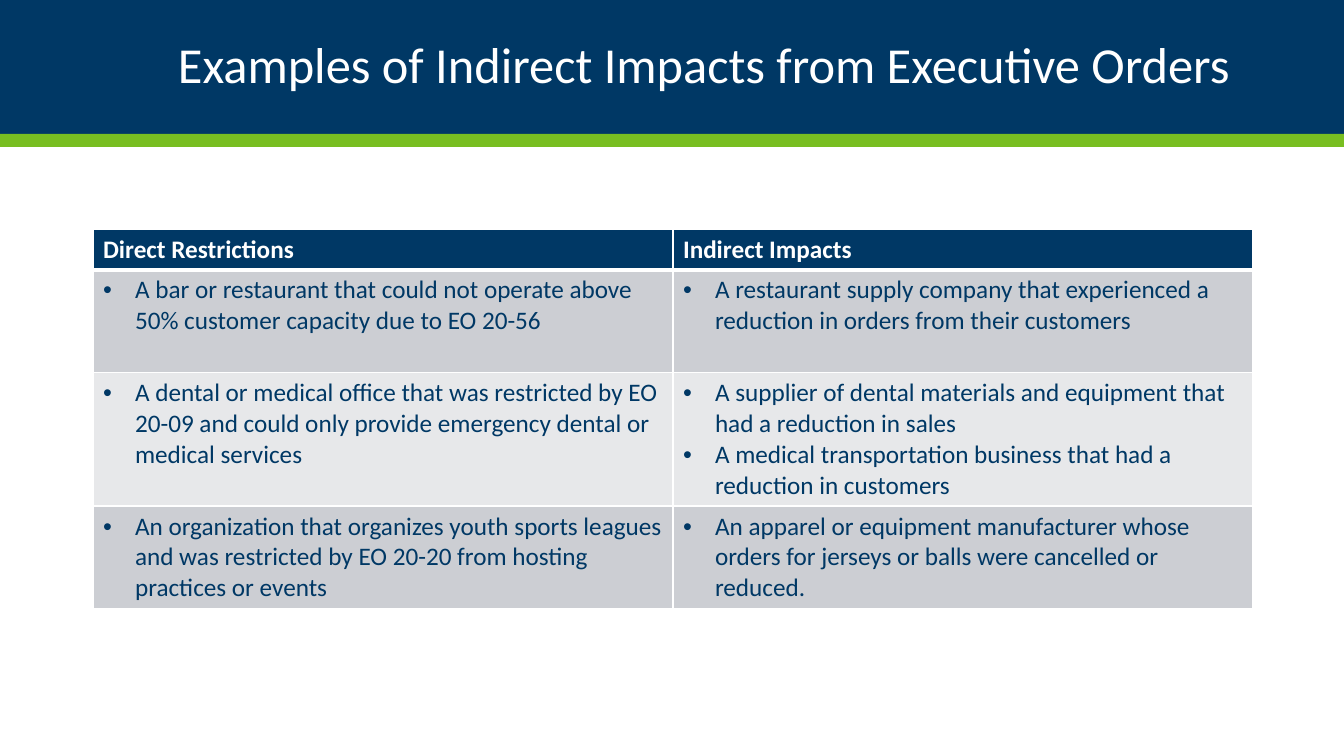
from lxml.etree import SubElement
from pptx import Presentation
from pptx.dml.color import RGBColor
from pptx.enum.shapes import MSO_SHAPE
from pptx.enum.text import MSO_ANCHOR, PP_ALIGN
from pptx.oxml.ns import qn
from pptx.util import Emu, Pt

THEME = {
    "font": "Calibri",
    "title_size": 36,
    "table_size": 18,
    "navy": RGBColor.from_string("003865"),
    "green": RGBColor.from_string("78BE21"),
    "white": RGBColor.from_string("FFFFFF"),
    "row_fills": [RGBColor.from_string("CCCED3"), RGBColor.from_string("E7E8EA")],
}
ROWS = [
    (["Direct Restrictions"], ["Indirect Impacts"]),
    (["A bar or restaurant that could not operate above 50% customer capacity due to EO 20-56"],
     ["A restaurant supply company that experienced a reduction in orders from their customers"]),
    (["A dental or medical office that was restricted by EO 20-09 and could only provide "
      "emergency dental or medical services"],
     ["A supplier of dental materials and equipment that had a reduction in sales",
      "A medical transportation business that had a reduction in customers"]),
    (["An organization that organizes youth sports leagues and was restricted by EO 20-20 "
      "from hosting practices or events"],
     ["An apparel or equipment manufacturer whose orders for jerseys or balls were "
      "cancelled or reduced."]),
]
ROW_HEIGHTS = [40, 103, 133, 102]
COLUMN_WIDTH = 580
BULLET_INDENT = 32


def px(length):
    """Turn slide pixels, 100.8 to the inch, into EMU."""
    return Emu(round(length * 914400 / 100.8))


def write(para, text, size, color, bold=False):
    span = para.add_run()
    span.text = text
    font_values = {"name": THEME["font"], "size": Pt(size), "bold": bold}
    for name, value in font_values.items():
        setattr(span.font, name, value)
    span.font.color.rgb = color


deck = Presentation()
deck.slide_width, deck.slide_height = px(1344), px(756)
page = deck.slides.add_slide(deck.slide_layouts.get_by_name("Title Only"))

# Header bands
for top, height, color in [(0, 134, THEME["navy"]), (134, 13, THEME["green"])]:
    band = page.shapes.add_shape(MSO_SHAPE.RECTANGLE, 0, px(top), px(1344), px(height))
    band.shadow.inherit = False
    band.fill.solid()
    band.fill.fore_color.rgb = color
    band.line.fill.background()

# Title, brought in front of the bands
title = page.shapes.title
title_place = {"left": px(93), "top": px(17), "width": px(1159), "height": px(101)}
for name, value in title_place.items():
    setattr(title, name, value)
title.text_frame.vertical_anchor = MSO_ANCHOR.MIDDLE
title.text_frame.word_wrap = True
para = title.text_frame.paragraphs[0]
para.alignment = PP_ALIGN.RIGHT
para.line_spacing = 0.9
write(para, "Examples of Indirect Impacts from Executive Orders ",
      THEME["title_size"], THEME["white"])
page.shapes._spTree.append(title._element)

# Table
table = page.shapes.add_table(len(ROWS), 2, px(93), px(229),
                              px(2 * COLUMN_WIDTH), px(sum(ROW_HEIGHTS))).table
for column in table.columns:
    column.width = px(COLUMN_WIDTH)

for row_index, (row_texts, row_height) in enumerate(zip(ROWS, ROW_HEIGHTS)):
    table.rows[row_index].height = px(row_height)
    is_header = row_index == 0
    fill_color = THEME["navy"] if is_header else THEME["row_fills"][(row_index - 1) % 2]
    text_color = THEME["white"] if is_header else THEME["navy"]
    border_widths = {"a:lnL": 1, "a:lnR": 1,
                     "a:lnT": 3 if row_index == 1 else 1,
                     "a:lnB": 3 if is_header else 1}

    for column_index, paragraphs in enumerate(row_texts):
        cell = table.cell(row_index, column_index)
        cell_properties = cell._tc.get_or_add_tcPr()
        for tag, width in border_widths.items():
            border = SubElement(cell_properties, qn(tag), w=str(Pt(width)))
            border_fill = SubElement(border, qn("a:solidFill"))
            SubElement(border_fill, qn("a:srgbClr"), val=str(THEME["white"]))
        cell.fill.solid()
        cell.fill.fore_color.rgb = fill_color

        for para_index, text in enumerate(paragraphs):
            frame = cell.text_frame
            para = frame.add_paragraph() if para_index else frame.paragraphs[0]
            write(para, text, THEME["table_size"], text_color, bold=is_header)
            if not is_header:
                para_properties = para._p.get_or_add_pPr()
                para_properties.set("marL", str(px(BULLET_INDENT)))
                para_properties.set("indent", str(-px(BULLET_INDENT)))
                SubElement(para_properties, qn("a:buFont"), typeface="Arial")
                SubElement(para_properties, qn("a:buChar"), char="•")

deck.save("out.pptx")
